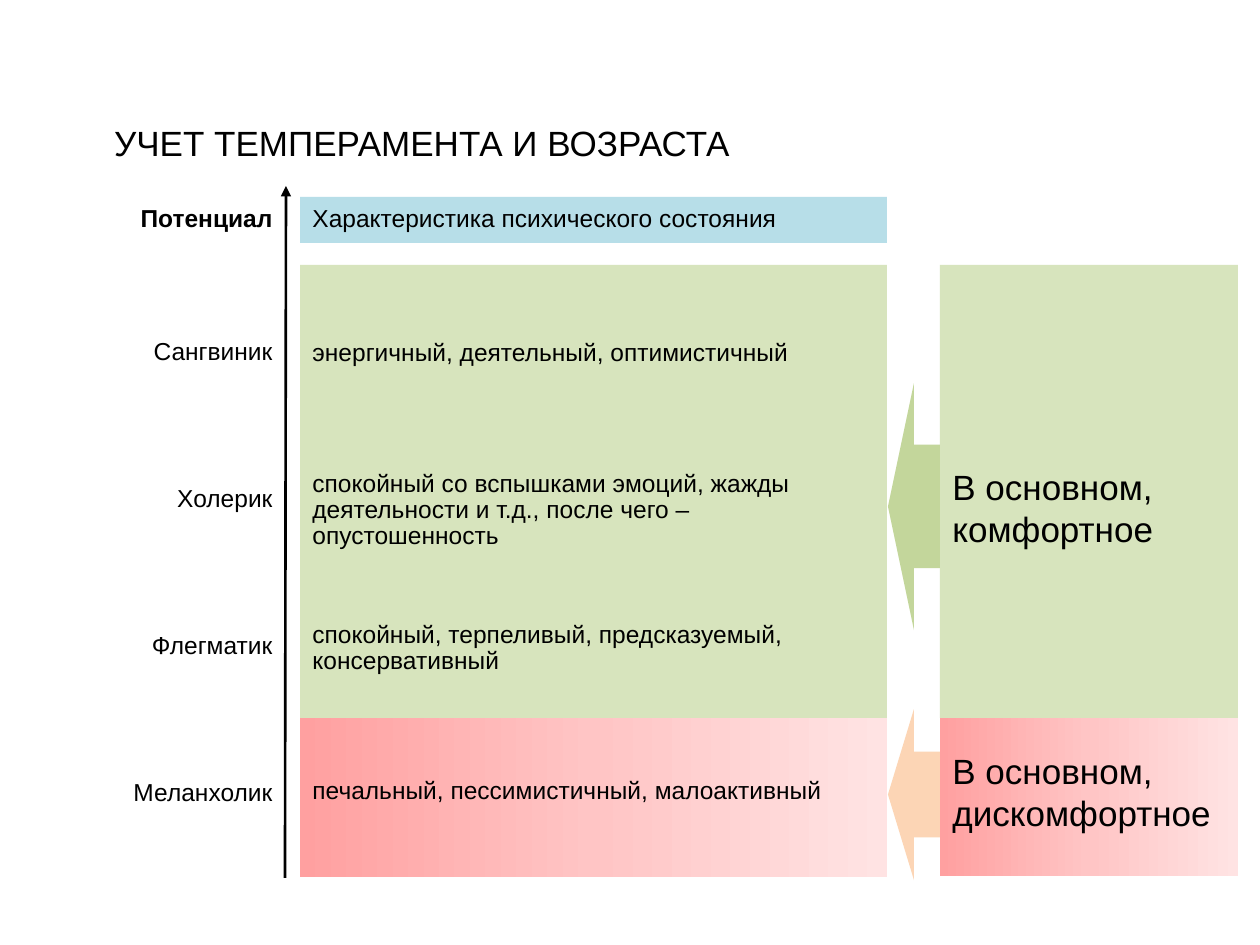
from copy import deepcopy

from lxml import etree
from pptx import Presentation
from pptx.dml.color import RGBColor
from pptx.enum.shapes import MSO_CONNECTOR, MSO_SHAPE
from pptx.enum.text import MSO_ANCHOR, PP_ALIGN
from pptx.oxml.ns import qn
from pptx.util import Emu, Pt

RECT, ARROW = MSO_SHAPE.RECTANGLE, MSO_SHAPE.LEFT_ARROW
STRAIGHT = MSO_CONNECTOR.STRAIGHT
TOP, MIDDLE = MSO_ANCHOR.TOP, MSO_ANCHOR.MIDDLE
LEFT, CENTER, RIGHT = PP_ALIGN.LEFT, PP_ALIGN.CENTER, PP_ALIGN.RIGHT

PX = 914400 / 126
FONT = "Arial"
COLORS = {
    "text": "000000",
    "header": "B7DEE8",
    "comfort": "D7E4BD",
    "comfort_arrow": "C3D69B",
    "discomfort_arrow": "FCD5B5",
}
DISCOMFORT = ["FFA0A0", "FFC5C5", "FFE3E3"]


def px(n):
    return Emu(round(n * PX))


def rgb(name):
    return RGBColor.from_string(COLORS.get(name, name))


class Deck:
    """Holds the style and the current slide."""

    def __init__(self, width, height):
        self.prs = Presentation()
        self.prs.slide_width, self.prs.slide_height = px(width), px(height)
        self.slide = self.prs.slides.add_slide(self.prs.slide_layouts[6])

    def fill_text(self, sp, paragraphs, size=14, align=LEFT, anchor=TOP, inset=6):
        """Fill sp with (text, format) pairs; inset is the top margin in px."""
        tf = sp.text_frame
        frame = {"word_wrap": True, "vertical_anchor": anchor,
                 "margin_top": px(inset)}
        for name, value in frame.items():
            setattr(tf, name, value)
        for i, (text, fmt) in enumerate(paragraphs):
            p = tf.add_paragraph() if i else tf.paragraphs[0]
            p.alignment = align
            for name, value in fmt.items():
                setattr(p, name, value)
            r = p.add_run()
            r.text = text
            for name, value in {"name": FONT, "size": Pt(size)}.items():
                setattr(r.font, name, value)
            r.font.color.rgb = rgb("text")
        return tf

    def text(self, box, paragraphs, **style):
        sp = self.slide.shapes.add_textbox(*map(px, box))
        return self.fill_text(sp, paragraphs, **style)

    def shape(self, kind, box, fill):
        """Add a borderless shape; a list of colours gives a gradient."""
        sp = self.slide.shapes.add_shape(kind, *map(px, box))
        sp.shadow.inherit = False
        sp.line.fill.background()
        if isinstance(fill, list):
            self.gradient(sp, fill)
        else:
            sp.fill.solid()
            sp.fill.fore_color.rgb = rgb(fill)
        return sp

    def gradient(self, sp, colors):
        sp.fill.gradient()
        sp.fill.gradient_angle = 0
        stops = sp._element.spPr.find(".//" + qn("a:gsLst"))
        while len(stops) < len(colors):
            stops.append(deepcopy(stops[0]))
        for i, (stop, color) in enumerate(zip(sp.fill.gradient_stops, colors)):
            stop.position = i / (len(colors) - 1)
            stop.color.rgb = rgb(color)

    def panel(self, box, fill, paragraphs, **style):
        return self.fill_text(self.shape(RECT, box, fill), paragraphs, **style)

    def arrow_line(self, start, end):
        sp = self.slide.shapes.add_connector(STRAIGHT, *map(px, start + end))
        sp.line.width = Pt(1.5)
        sp.line.color.rgb = rgb("text")
        ln = sp._element.spPr.find(qn("a:ln"))
        etree.SubElement(ln, qn("a:tailEnd"), type="triangle")
        etree.SubElement(sp._element.spPr, qn("a:effectLst"))


def main():
    deck = Deck(1260, 945)
    deck.text((5, 116, 834, 54), [("УЧЕТ ТЕМПЕРАМЕНТА И ВОЗРАСТА", {})],
              size=20, align=CENTER, anchor=MIDDLE)

    state_x, state_w = 300, 587
    mood_x, mood_w = 940, 298
    comfort_y, comfort_h = 265, 453
    discomfort_y, discomfort_h = comfort_y + comfort_h, 159

    deck.panel((mood_x, comfort_y, mood_w, comfort_h), "comfort",
               [("В основном, комфортное", {})], size=20, inset=201)
    arrow_x = state_x + state_w + 1
    arrow_w = mood_x - arrow_x
    deck.shape(ARROW, (arrow_x, 383, arrow_w, 247), "comfort_arrow")
    deck.shape(ARROW, (arrow_x, 709, arrow_w, 171), "discomfort_arrow")

    row = {"line_spacing": Pt(28)}
    temperaments = ["Сангвиник", "Холерик", "Флегматик", "Меланхолик"]
    labels = [("Потенциал", {})] + [
        (name, {**row, "space_before": Pt(56 if i else 48)})
        for i, name in enumerate(temperaments)]
    tf = deck.text((32, 197, 253, 679), labels, align=RIGHT)
    tf.paragraphs[0].runs[0].font.bold = True

    deck.panel((state_x, 197, state_w, 46), "header",
               [("Характеристика психического состояния", {})])
    deck.arrow_line((285, 878), (286, 186))

    tight = {"line_spacing": 0.88}
    deck.panel((state_x, comfort_y, state_w, comfort_h), "comfort", [
        ("энергичный, деятельный, оптимистичный", tight),
        ("спокойный со вспышками эмоций, жажды деятельности и т.д., "
         "после чего – опустошенность", {**tight, "space_before": Pt(60)}),
        ("спокойный, терпеливый, предсказуемый, консервативный",
         {**tight, "space_before": Pt(42)}),
    ], inset=76)
    deck.panel((mood_x, discomfort_y, mood_w, discomfort_h - 1), DISCOMFORT,
               [("В основном,", {}), ("дискомфортное", {})], size=20, inset=31)
    deck.panel((state_x, discomfort_y, state_w, discomfort_h), DISCOMFORT,
               [("печальный, пессимистичный, малоактивный", {})], inset=57)

    deck.prs.save("out.pptx")


if __name__ == "__main__":
    main()
